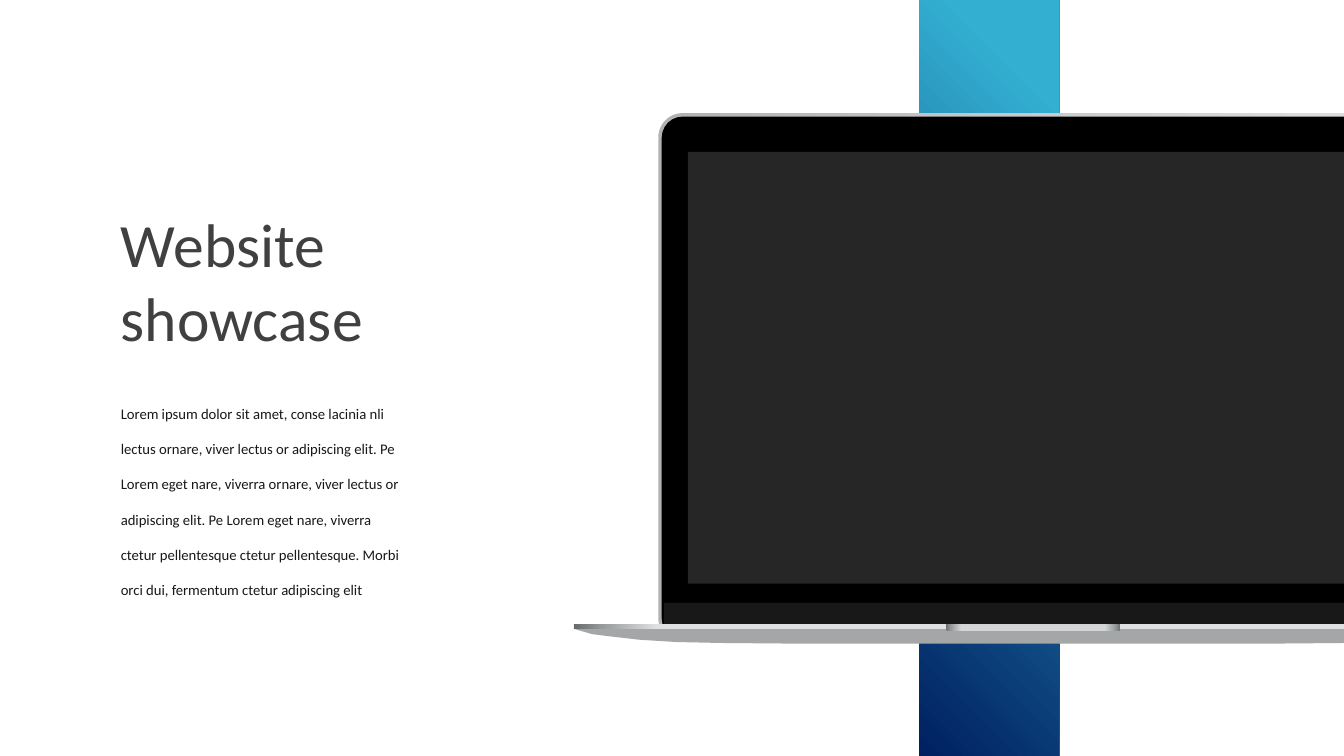
from dataclasses import dataclass

from lxml import etree
from pptx import Presentation
from pptx import util as u
from pptx.dml.color import RGBColor
from pptx.enum import shapes, text
from pptx.oxml.ns import qn

Pt = u.Pt
SHAPE = shapes.MSO_SHAPE


@dataclass(frozen=True)
class Theme:
    font: str = "Calibri"
    title_size: float = 44
    body_size: float = 10.5
    title: str = "404040"
    body: str = "181818"
    stripe: tuple = ((12, "33AFD2"), (100, "002060"))
    lid: tuple = ((0, "B0B2B4"), (100, "DFE0E1"))
    bezel: str = "000000"
    chin: str = "181818"
    screen: str = "262626"
    base: str = "A5A6A8"
    metal_ends: tuple = ((0, "686B6C"), (3, "96999A"))
    deck: str = "DFE0E1"
    latch: str = "D3D5D6"


theme = Theme()


def paint(part, colour, radial=False):
    """Fill a part with one colour or with (percent, colour) stops; no line, no shadow."""
    part.shadow.inherit = False
    part.line.fill.background()
    if isinstance(colour, str):
        part.fill.solid()
        part.fill.fore_color.rgb = RGBColor.from_string(colour)
        return
    part.fill.gradient()
    gradient = part._element.spPr.find(qn("a:gradFill"))
    for child in list(gradient):
        gradient.remove(child)
    stops = etree.SubElement(gradient, qn("a:gsLst"))
    for percent, stop_colour in colour:
        stop = etree.SubElement(stops, qn("a:gs"), pos=str(percent * 1000))
        etree.SubElement(stop, qn("a:srgbClr"), val=stop_colour)
    if radial:
        centre = etree.SubElement(gradient, qn("a:path"), path="circle")
        etree.SubElement(centre, qn("a:fillToRect"), l="100000", b="100000")
    else:
        etree.SubElement(gradient, qn("a:lin"), ang="0", scaled="0")


def metal(middle):
    """Brushed metal: dark at both ends, one colour between."""
    mirrored = tuple((100 - at, colour) for at, colour in reversed(theme.metal_ends))
    return theme.metal_ends + ((9, middle), (91, middle)) + mirrored


prs = Presentation()
prs.slide_width, prs.slide_height = Pt(960), Pt(540)
slide = prs.slides.add_slide(prs.slide_layouts[6])

stripe = slide.shapes.add_shape(SHAPE.RECTANGLE, Pt(656.6), 0, Pt(100), Pt(540))
paint(stripe, theme.stripe, radial=True)

# Laptop, running off the right edge
laptop = slide.shapes.add_group_shape().shapes
centre_x, deck_top = 738, 446

# preset, width, top, height, corner adjustments, colour
screen_parts = [
    (SHAPE.ROUNDED_RECTANGLE, 535.6, 80.8, 378, [0.046], theme.lid),
    (SHAPE.ROUNDED_RECTANGLE, 530.6, 83.3, 373.4, [0.04], theme.bezel),
    (SHAPE.ROUND_2_SAME_RECTANGLE, 527.6, 430.6, 24.4, [0, 0.5], theme.chin),
    (SHAPE.RECTANGLE, 493.4, 108.6, 308.4, [], theme.screen),
]
base_parts = [
    (SHAPE.RECTANGLE, 656, deck_top, 3.2, [], metal(theme.deck)),
    (SHAPE.ROUND_2_SAME_RECTANGLE, 125, deck_top, 4.9, [0, 0.5], metal(theme.latch)),
]

# Left half of the base: distance from the centre, depth below the deck
base_profile = [(328, 0), (328, 3.2), (315, 7), (302, 8.6), (281, 11),
                (255, 12.6), (223, 13.3), (177, 13.7)]

for preset, width, top, height, corners, colour in screen_parts + base_parts:
    if (preset, width) == base_parts[0][:2]:
        outline = [(centre_x - x, deck_top + y) for x, y in base_profile]
        outline += [(centre_x + x, deck_top + y) for x, y in reversed(base_profile)]
        points = [(Pt(x), Pt(y)) for x, y in outline]
        builder = laptop.build_freeform(*points[0])
        builder.add_line_segments(points[1:], close=True)
        paint(builder.convert_to_shape(), theme.base)
    part = laptop.add_shape(preset, Pt(centre_x - width / 2), Pt(top), Pt(width), Pt(height))
    for index, corner in enumerate(corners):
        part.adjustments[index] = corner
    paint(part, colour)

lorem = (
    "Lorem ipsum dolor sit amet, conse lacinia nli lectus ornare, viver lectus or "
    "adipiscing elit. Pe Lorem eget nare, viverra ornare, viver lectus or adipiscing "
    "elit. Pe Lorem eget nare, viverra ctetur pellentesque ctetur pellentesque. Morbi "
    "orci dui, fermentum ctetur adipiscing elit"
)
# wording, top, width, height, size, colour, line spacing
copy_blocks = [
    ("Website showcase", 143.3, 329.8, 113, theme.title_size, theme.title, 1),
    (lorem, 272.9, 217.4, 157, theme.body_size, theme.body, 2),
]
for wording, top, width, height, size, colour, spacing in copy_blocks:
    frame = slide.shapes.add_textbox(Pt(79.2), Pt(top), Pt(width), Pt(height)).text_frame
    frame.word_wrap = True
    frame.auto_size = text.MSO_AUTO_SIZE.SHAPE_TO_FIT_TEXT
    paragraph = frame.paragraphs[0]
    paragraph.text = wording
    paragraph.line_spacing = spacing
    paragraph.font.name = theme.font
    paragraph.font.size = Pt(size)
    paragraph.font.color.rgb = RGBColor.from_string(colour)

prs.save("out.pptx")
